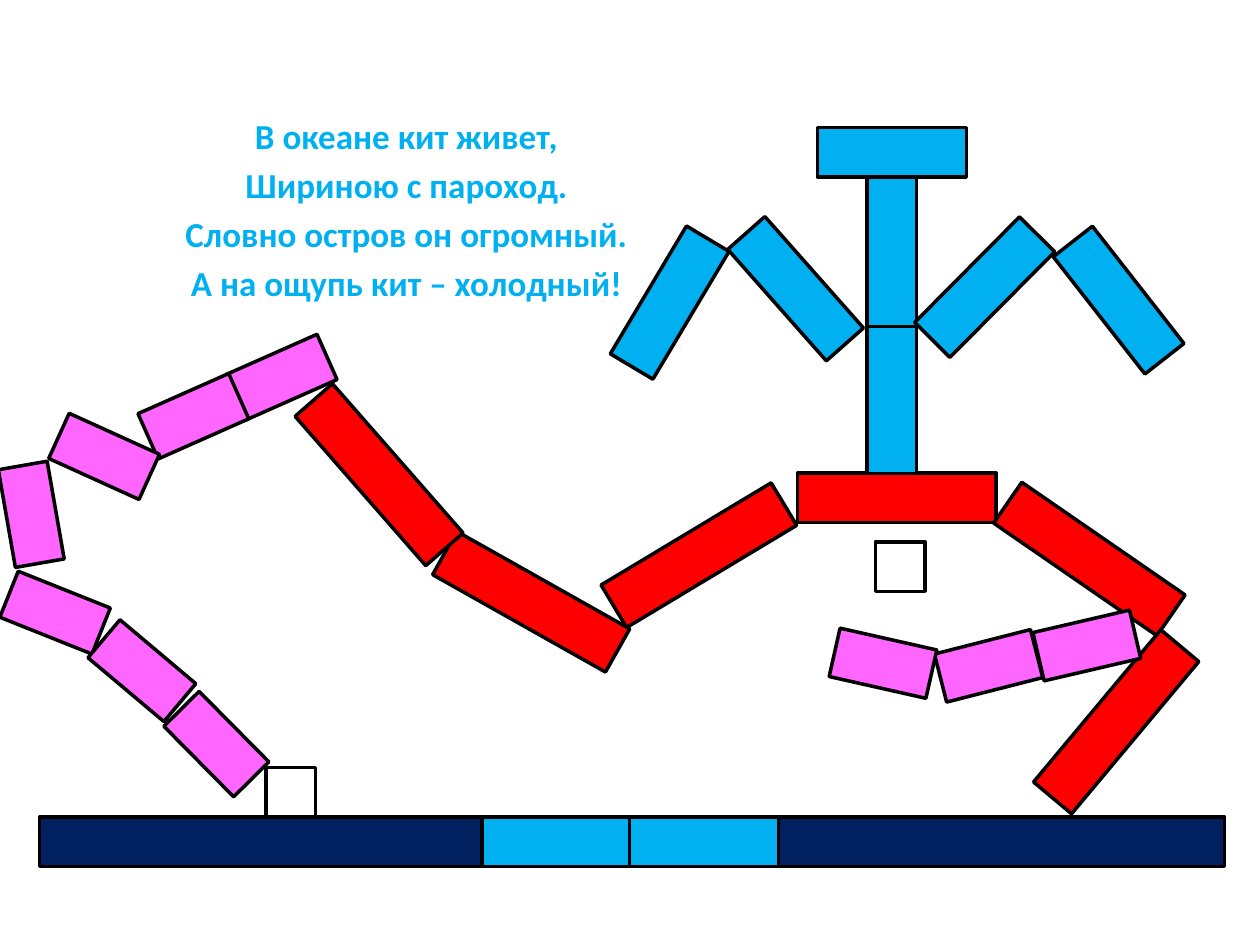
from pptx import Presentation
from pptx.dml.color import RGBColor
from pptx.enum.shapes import MSO_SHAPE
from pptx.enum.text import MSO_ANCHOR, MSO_AUTO_SIZE, PP_ALIGN
from pptx.oxml.ns import qn
from pptx.util import Cm, Pt

RECTANGLE = MSO_SHAPE.RECTANGLE
CENTER = PP_ALIGN.CENTER
TOP = MSO_ANCHOR.TOP
NO_AUTOFIT = MSO_AUTO_SIZE.NONE

NAVY, BLUE, RED = "002060", "00B0F0", "FF0000"
PINK, WHITE, BLACK = "FF66FF", "FFFFFF", "000000"

ROD_WIDTH = 1  # cm; every rod length is a whole number of cm

RIDDLE = [
    "В океане кит живет,",
    "Шириною с пароход.",
    "Словно остров он огромный.",
    "А на ощупь кит – холодный!",
]

# Rod sets from back to front: colour, length, [(centre x, centre y, angle)]
ROD_SETS = [
    # Base of the whale
    (NAVY, 9, [(5.3, 16.97, 270), (20.19, 16.97, 270)]),
    (BLUE, 3, [(11.22, 16.97, 90), (14.19, 16.97, 90)]),
    # Back, head and jaw
    (RED, 4, [(18.08, 10.03, 270), (21.96, 11.27, 124.6),
              (22.5, 14.55, 219.9), (14.09, 11.19, 239),
              (10.71, 12.13, 299.4), (7.64, 9.57, 138.8)]),
    # Eye
    (WHITE, 1, [(18.15, 11.42, 270)]),
    # Tail
    (PINK, 2, [(5.68, 7.6, 246.1), (3.9, 8.39, 246.1),
               (2.1, 9.2, 294.4), (0.63, 10.37, 350.1),
               (1.11, 12.35, 111.8), (2.86, 13.52, 130.1),
               (4.36, 15, 135.3)]),
    (WHITE, 1, [(5.86, 15.97, 270)]),
    # Water spout
    (BLUE, 3, [(17.98, 8.05, 0), (17.98, 5.08, 0), (17.98, 3.07, 90),
               (19.85, 5.79, 44.8), (16.04, 5.82, 318.5),
               (22.55, 6.05, 142), (13.5, 6.1, 30.8)]),
    # Mouth
    (PINK, 2, [(21.91, 13.01, 256.9), (19.93, 13.42, 255.7),
               (17.8, 13.37, 282.7)]),
]


def rgb(hex_value):
    return RGBColor.from_string(hex_value)


def set_attributes(target, values):
    for attribute, value in values.items():
        setattr(target, attribute, value)


def add_rod(slide, color, length, center_x, center_y, angle):
    rod = slide.shapes.add_shape(
        RECTANGLE, Cm(center_x - ROD_WIDTH / 2), Cm(center_y - length / 2),
        Cm(ROD_WIDTH), Cm(length))
    rod.rotation = angle
    rod.shadow.inherit = False
    rod.fill.solid()
    rod.fill.fore_color.rgb = rgb(color)
    rod.line.color.rgb = rgb(BLACK)
    rod.line.width = Pt(2)


def remove_bullet(paragraph):
    properties = paragraph._p.get_or_add_pPr()
    properties.set("marL", "0")
    properties.set("indent", "0")
    properties.append(properties.makeelement(qn("a:buNone"), {}))


def fill_riddle(body):
    set_attributes(body, {"left": Cm(3.18), "top": Cm(1.19),
                          "width": Cm(10.03), "height": Cm(5.36)})
    frame = body.text_frame
    set_attributes(frame, {"word_wrap": True, "auto_size": NO_AUTOFIT,
                           "vertical_anchor": TOP, "margin_top": Cm(1.12)})
    frame.text = "\n".join(RIDDLE)
    for number, verse in enumerate(frame.paragraphs):
        set_attributes(verse, {"alignment": CENTER,
                               "space_before": Pt(4 if number else 0)})
        remove_bullet(verse)
        set_attributes(verse.font, {"name": "Calibri", "size": Pt(20),
                                    "bold": True})
        verse.font.color.rgb = rgb(BLUE)


def main():
    presentation = Presentation()
    presentation.slide_width = Cm(25.4)
    presentation.slide_height = Cm(19.05)
    slide = presentation.slides.add_slide(presentation.slide_layouts[1])

    # The slide has a riddle but no title
    title = slide.shapes.title._element
    title.getparent().remove(title)
    fill_riddle(slide.placeholders[1])

    # Whale made of counting rods
    for color, length, places in ROD_SETS:
        for center_x, center_y, angle in places:
            add_rod(slide, color, length, center_x, center_y, angle)

    presentation.save("out.pptx")


if __name__ == "__main__":
    main()
